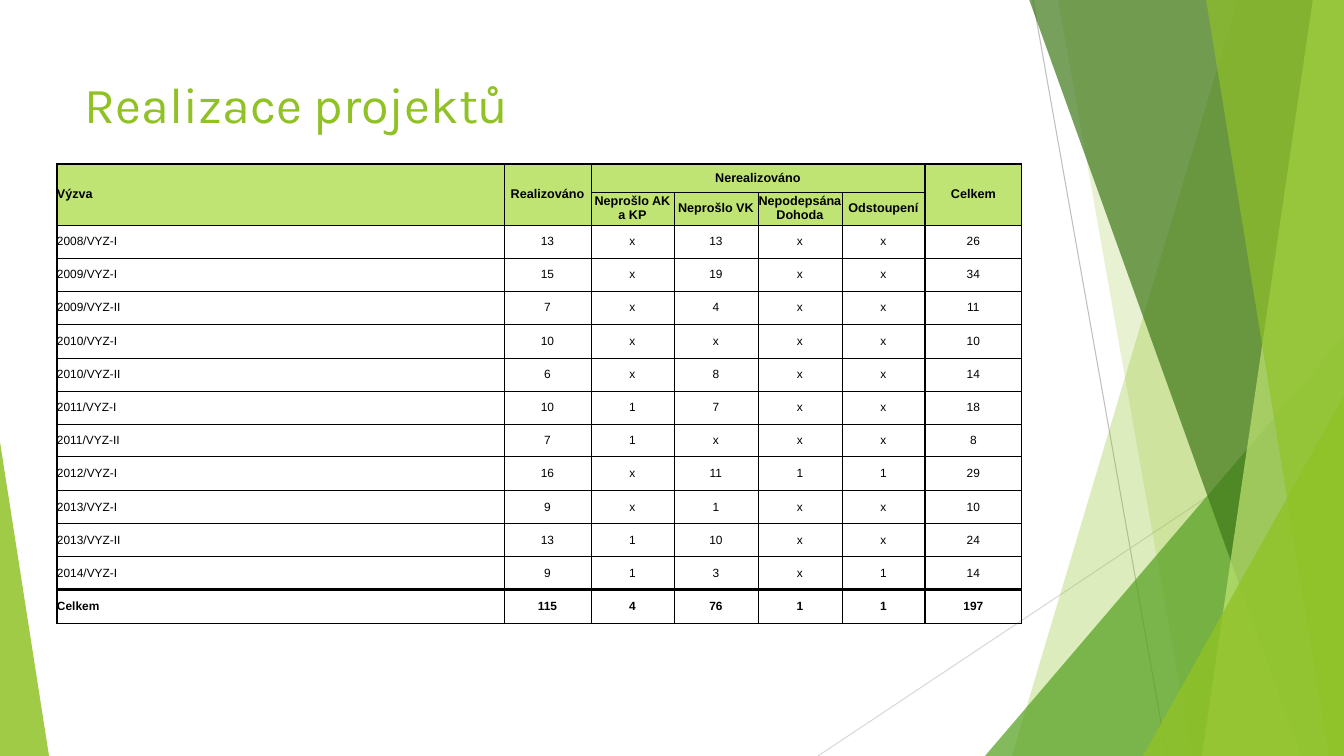
from dataclasses import dataclass

from lxml.etree import SubElement
from pptx import Presentation
from pptx.dml.color import RGBColor
from pptx.enum.shapes import MSO_CONNECTOR, MSO_SHAPE
from pptx.enum.text import MSO_ANCHOR, PP_ALIGN
from pptx.oxml.ns import qn
from pptx.util import Emu, Pt

SCALE = 914400 / 100.8
WIDE, HIGH = 1344, 756

BLACK = RGBColor(0, 0, 0)
GREEN = RGBColor(0x90, 0xC2, 0x26)
GRASS = RGBColor(0x54, 0xA0, 0x21)
DARK = RGBColor(0x3F, 0x78, 0x19)
LIME = RGBColor(0xC0, 0xE4, 0x74)
SILVER = RGBColor(0xBF, 0xBF, 0xBF)
PALE = RGBColor(0xD9, 0xD9, 0xD9)


def px(size: int) -> Emu:
    return Emu(round(size * SCALE))


@dataclass
class Ray:
    start: tuple[int, int]
    end: tuple[int, int]
    color: RGBColor


@dataclass
class Band:
    """Panel reaching the right edge; its left side runs from top to foot."""
    top: int
    foot: int
    color: RGBColor
    alpha: int


@dataclass
class Wedge:
    left: int
    top: int
    width: int
    peak: int
    color: RGBColor
    alpha: int


DECOR = [
    Ray((1033, 0), (1167, HIGH), SILVER),
    Ray((WIDE, 406), (818, HIGH), PALE),
    Band(1238, 1012, GREEN, 30),
    Band(1058, 1192, GREEN, 20),
    Wedge(985, 336, 359, 1, GRASS, 72),
    Band(1029, 1301, DARK, 70),
    Band(1313, 1202, LIME, 70),
    Band(1206, 1329, GREEN, 65),
    Wedge(1143, 396, 201, 1, GREEN, 80),
    Wedge(0, 442, 49, 0, GREEN, 85),
]

HEAD = [
    ("Výzva", "Realizováno", "Nerealizováno", "", "", "", "Celkem"),
    ("", "", "Neprošlo AK a KP", "Neprošlo VK", "Nepodepsána Dohoda",
     "Odstoupení", ""),
]
DATA = """
2008/VYZ-I 13 x 13 x x 26
2009/VYZ-I 15 x 19 x x 34
2009/VYZ-II 7 x 4 x x 11
2010/VYZ-I 10 x x x x 10
2010/VYZ-II 6 x 8 x x 14
2011/VYZ-I 10 1 7 x x 18
2011/VYZ-II 7 1 x x x 8
2012/VYZ-I 16 x 11 1 1 29
2013/VYZ-I 9 x 1 x x 10
2013/VYZ-II 13 1 10 x x 24
2014/VYZ-I 9 1 3 x 1 14
Celkem 115 4 76 1 1 197
"""
ROWS = HEAD + [tuple(line.split()) for line in DATA.strip().splitlines()]
LAST = len(ROWS) - 1
COLS = [447, 87, 83, 84, 84, 83, 97]
MERGES = [((0, 0), (1, 0)), ((0, 1), (1, 1)), ((0, 2), (0, 5)), ((0, 6), (1, 6))]

# Border weights by grid edge; all others are thin
THIN = 0.5
UPRIGHT = {0: 1, 6: 2, 7: 1}
LEVEL = {0: 1, LAST: 2, LAST + 1: 1}


def paint(shape, color: RGBColor, alpha: int) -> None:
    shape.shadow.inherit = False
    shape.line.fill.background()
    shape.fill.solid()
    shape.fill.fore_color.rgb = color
    tint = shape._element.spPr.find(qn("a:solidFill"))[0]
    SubElement(tint, qn("a:alpha"), val=str(alpha * 1000))


def draw_ray(slide, ray: Ray) -> None:
    line = slide.shapes.add_connector(
        MSO_CONNECTOR.STRAIGHT, *map(px, ray.start + ray.end))
    line.line.color.rgb = ray.color
    line.line.width = Pt(0.75)
    SubElement(line._element.spPr, qn("a:effectLst"))


def draw_band(slide, band: Band) -> None:
    path = slide.shapes.build_freeform(band.top, -1, scale=SCALE)
    path.add_line_segments([(WIDE, -1), (WIDE, HIGH), (band.foot, HIGH)])
    paint(path.convert_to_shape(), band.color, band.alpha)


def draw_wedge(slide, wedge: Wedge) -> None:
    shape = slide.shapes.add_shape(
        MSO_SHAPE.ISOSCELES_TRIANGLE, px(wedge.left), px(wedge.top),
        px(wedge.width), px(HIGH - wedge.top))
    shape.adjustments[0] = wedge.peak
    paint(shape, wedge.color, wedge.alpha)


def draw_title(slide, text: str) -> None:
    box = slide.shapes.add_textbox(px(75), px(68), px(948), px(145))
    box.text_frame.word_wrap = True
    para = box.text_frame.paragraphs[0]
    para.text = text
    para.font.name = "Karla"
    para.font.size = Pt(36)
    para.font.color.rgb = GREEN


def rule_cell(cell, row: int, col: int) -> None:
    edges = {
        "L": UPRIGHT.get(col, THIN),
        "R": UPRIGHT.get(col + cell.span_width, THIN),
        "T": LEVEL.get(row, THIN),
        "B": LEVEL.get(row + cell.span_height, THIN),
    }
    props = cell._tc.get_or_add_tcPr()
    for side, weight in edges.items():
        line = SubElement(props, qn(f"a:ln{side}"), w=str(Pt(weight)))
        fill = SubElement(line, qn("a:solidFill"))
        SubElement(fill, qn("a:srgbClr"), val=str(BLACK))


def fill_cell(cell, row: int, col: int) -> None:
    head = row < len(HEAD)
    cell.margin_left = cell.margin_right = 0
    cell.margin_top = cell.margin_bottom = 0
    cell.vertical_anchor = MSO_ANCHOR.MIDDLE
    rule_cell(cell, row, col)
    if head:
        cell.fill.solid()
        cell.fill.fore_color.rgb = LIME
    else:
        cell.fill.background()
    cell.text = ROWS[row][col]
    para = cell.text_frame.paragraphs[0]
    para.alignment = PP_ALIGN.CENTER if col else PP_ALIGN.LEFT
    para.font.name = "Arial"
    para.font.size = Pt(9 if head else 8.5)
    para.font.bold = head or row == LAST
    para.font.color.rgb = BLACK


def draw_table(slide) -> None:
    frame = slide.shapes.add_table(
        len(ROWS), len(COLS), px(57), px(164), px(sum(COLS)), px(460))
    table = frame.table
    table.first_row = table.horz_banding = False
    for col, width in enumerate(COLS):
        table.columns[col].width = px(width)
    # The rows below the first share 432 px evenly
    edges = [0] + [28 + 432 * step // LAST for step in range(LAST + 1)]
    for row, (top, foot) in enumerate(zip(edges, edges[1:])):
        table.rows[row].height = px(foot - top)
    for start, end in MERGES:
        table.cell(*start).merge(table.cell(*end))
    for row in range(len(ROWS)):
        for col in range(len(COLS)):
            cell = table.cell(row, col)
            if not cell.is_spanned:
                fill_cell(cell, row, col)


def main() -> None:
    deck = Presentation()
    deck.slide_width, deck.slide_height = px(WIDE), px(HIGH)
    slide = deck.slides.add_slide(deck.slide_layouts[6])
    # Backdrop, back to front
    tools = {Ray: draw_ray, Band: draw_band, Wedge: draw_wedge}
    for part in DECOR:
        tools[type(part)](slide, part)
    # Content
    draw_title(slide, "Realizace projektů")
    draw_table(slide)
    deck.save("out.pptx")


if __name__ == "__main__":
    main()
